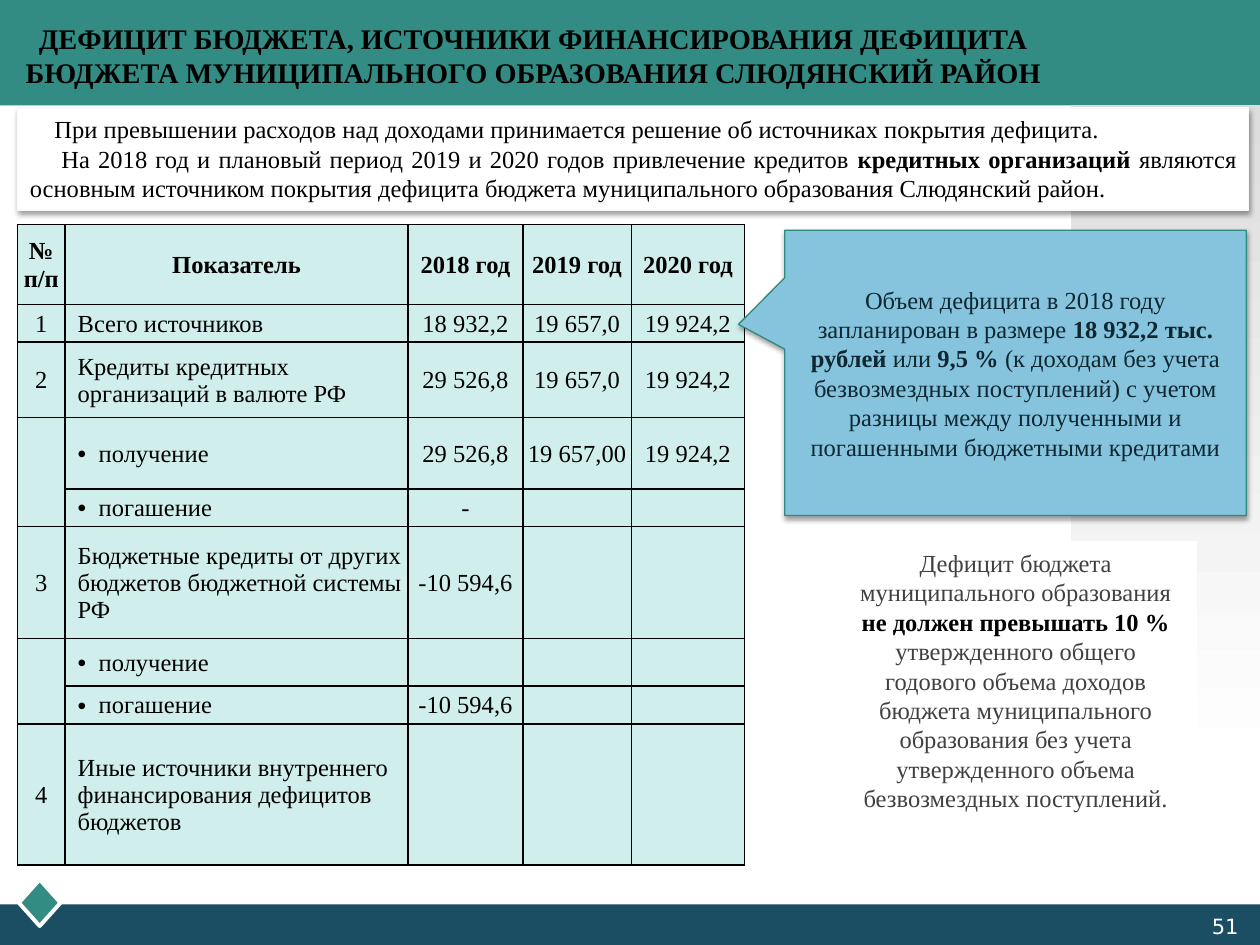
from dataclasses import dataclass
from typing import NamedTuple, Optional

from lxml.etree import SubElement
from pptx import Presentation
from pptx.dml.color import RGBColor
from pptx.enum.shapes import MSO_SHAPE as Shape
from pptx.enum.text import MSO_ANCHOR as Anchor, PP_ALIGN as Align
from pptx.oxml.ns import qn
from pptx.util import Pt


@dataclass(frozen=True)
class Theme:
    font: str = "Times New Roman"
    number_font: str = "DejaVu Sans"
    title_size: float = 16.2
    body_size: float = 14
    number_size: float = 12
    teal: str = "328C83"
    navy: str = "1B4E63"
    mint: str = "D0EEEB"
    sky: str = "86C4DE"
    callout_line: str = "2F8B82"
    callout_text: str = "0E2732"
    muted_text: str = "404040"
    pale_line: str = "F9F9F9"
    panel_grey: str = "DDDDDD"
    black: str = "000000"
    white: str = "FFFFFF"


class Box(NamedTuple):
    left: float
    top: float
    width: float
    height: float

    def lengths(self):
        return [Pt(value) for value in self]


class IndicatorRow(NamedTuple):
    height: float
    number: str
    indicator: str
    amounts: tuple = ("", "", "")
    bulleted: bool = False


THEME = Theme()
TABLE_BOX = Box(10, 128.3, 415.5, 367)
COLUMN_WIDTHS = (27.2, 196, 65.6, 62, 64.7)
MERGED_NUMBER_ROWS = (3, 6)
ROWS = (
    IndicatorRow(45.8, "№ п/п", "Показатель", ("2018 год", "2019 год", "2020 год")),
    IndicatorRow(21.5, "1", "Всего источников", ("18 932,2", "19 657,0", "19 924,2")),
    IndicatorRow(43, "2", "Кредиты кредитных организаций в валюте РФ",
                 ("29 526,8", "19 657,0", "19 924,2")),
    IndicatorRow(40.8, "", "получение", ("29 526,8", "19 657,00", "19 924,2"), True),
    IndicatorRow(21.5, "", "погашение", ("-", "", ""), True),
    IndicatorRow(64, "3", "Бюджетные кредиты от других бюджетов бюджетной системы РФ",
                 ("-10 594,6", "", "")),
    IndicatorRow(27.3, "", "получение", bulleted=True),
    IndicatorRow(21.5, "", "погашение", ("-10 594,6", "", ""), True),
    IndicatorRow(80.7, "4", "Иные источники внутреннего финансирования дефицитов бюджетов"),
)


def rgb(color: str) -> RGBColor:
    return RGBColor.from_string(color)


def write(frame, *paragraphs: str, size: float = THEME.body_size, font: str = THEME.font,
          color: str = THEME.black, strong_color: Optional[str] = None, bold: bool = False,
          align=Align.CENTER, anchor=Anchor.TOP, indents: tuple = (), bulleted: bool = False):
    """Fill a text frame; parts between asterisks are bold."""
    frame.word_wrap = True
    frame.vertical_anchor = anchor
    for index, content in enumerate(paragraphs):
        paragraph = frame.paragraphs[0] if index == 0 else frame.add_paragraph()
        paragraph.alignment = align
        properties = paragraph._p.get_or_add_pPr()
        if indents:
            properties.set("indent", str(Pt(indents[index])))
        if bulleted:
            properties.set("marL", str(Pt(12)))
            properties.set("indent", str(-Pt(12)))
            SubElement(properties, qn("a:buFont"), typeface="Arial")
            SubElement(properties, qn("a:buChar"), char="•")
        if not content:
            SubElement(paragraph._p, qn("a:endParaRPr"), sz=str(int(size * 100)))
            continue
        for part, words in enumerate(content.split("*")):
            if not words:
                continue
            strong = part % 2 == 1
            run = paragraph.add_run()
            run.text = words
            run.font.size = Pt(size)
            run.font.name = font
            run.font.bold = bold or strong
            run.font.color.rgb = rgb(strong_color if strong and strong_color else color)


def add_block(slide, kind, box: Box, fill: str, line: Optional[str] = None,
              line_width: float = 0.75, shadow: bool = False):
    block = slide.shapes.add_shape(kind, *box.lengths())
    block.shadow.inherit = False
    block.fill.solid()
    block.fill.fore_color.rgb = rgb(fill)
    if line:
        block.line.color.rgb = rgb(line)
        block.line.width = Pt(line_width)
    else:
        block.line.fill.background()
    if shadow:
        effects = block.element.spPr.find(qn("a:effectLst"))
        outer = SubElement(effects, qn("a:outerShdw"), blurRad=str(Pt(3.1)),
                           dist=str(Pt(1.6)), dir="5400000", rotWithShape="0")
        tint = SubElement(outer, qn("a:srgbClr"), val=THEME.black)
        SubElement(tint, qn("a:alpha"), val="38000")
    return block


def draw_backdrop(slide):
    add_block(slide, Shape.RECTANGLE, Box(0, 0, 720, 60.3), THEME.teal)
    add_block(slide, Shape.RECTANGLE, Box(0, 516.8, 720, 23.2), THEME.navy)
    add_block(slide, Shape.DIAMOND, Box(10.8, 502.6, 23.8, 26.6), THEME.teal, THEME.white, 2.25)
    side_panel = add_block(slide, Shape.RECTANGLE, Box(612, 60, 108, 378), THEME.white)
    side_panel.fill.gradient()
    side_panel.fill.gradient_angle = 270
    for stop, color in zip(side_panel.fill.gradient_stops, (THEME.panel_grey, THEME.white)):
        stop.color.rgb = rgb(color)


def style_cell(cell, left_inset: float):
    cell.margin_left = Pt(left_inset)
    cell.margin_top = cell.margin_right = Pt(0.7)
    cell.margin_bottom = 0
    cell.vertical_anchor = Anchor.MIDDLE
    properties = cell._tc.get_or_add_tcPr()
    for side in ("lnL", "lnR", "lnT", "lnB"):
        border = SubElement(properties, qn(f"a:{side}"), w=str(Pt(1)))
        SubElement(SubElement(border, qn("a:solidFill")), qn("a:srgbClr"), val=THEME.black)
    cell.fill.solid()
    cell.fill.fore_color.rgb = rgb(THEME.mint)


def draw_sources_table(slide):
    table = slide.shapes.add_table(len(ROWS), len(COLUMN_WIDTHS), *TABLE_BOX.lengths()).table
    table.first_row = table.horz_banding = False
    for column, width in zip(table.columns, COLUMN_WIDTHS):
        column.width = Pt(width)
    for row_index, row in enumerate(ROWS):
        table.rows[row_index].height = Pt(row.height)
        header = row_index == 0
        for column_index, words in enumerate((row.number, row.indicator, *row.amounts)):
            cell = table.cell(row_index, column_index)
            descriptive = column_index == 1 and not header
            style_cell(cell, 7.2 if descriptive else 0.7)
            write(cell.text_frame, words, bold=header, anchor=None,
                  align=Align.LEFT if descriptive else Align.CENTER,
                  bulleted=descriptive and row.bulleted)
    for first in MERGED_NUMBER_ROWS:
        table.cell(first, 0).merge(table.cell(first + 1, 0))


def draw_title(slide):
    title = slide.shapes.title
    title.left, title.top, title.width, title.height = Box(0, 0, 609, 62.6).lengths()
    write(title.text_frame,
          "ДЕФИЦИТ БЮДЖЕТА, ИСТОЧНИКИ ФИНАНСИРОВАНИЯ ДЕФИЦИТА "
          "БЮДЖЕТА МУНИЦИПАЛЬНОГО ОБРАЗОВАНИЯ СЛЮДЯНСКИЙ РАЙОН",
          size=THEME.title_size, bold=True, anchor=Anchor.MIDDLE)
    title.element.getparent().append(title.element)  # in front of the header band


def draw_page_number(slide):
    page_number = slide.shapes.add_textbox(*Box(681.8, 518.4, 36.7, 21.6).lengths())
    write(page_number.text_frame, "51", size=THEME.number_size,
          font=THEME.number_font, color=THEME.white)


def draw_notes(slide):
    limit = add_block(slide, Shape.RECTANGLE, Box(477.4, 309.6, 206, 160), THEME.white, THEME.white)
    write(limit.text_frame, "Дефицит бюджета муниципального образования",
          "*не должен превышать 10 % *утвержденного общего годового объема доходов бюджета "
          "муниципального образования без учета утвержденного объема безвозмездных поступлений.",
          color=THEME.muted_text, strong_color=THEME.black)
    intro = add_block(slide, Shape.RECTANGLE, Box(10, 61.7, 703.6, 58.3), THEME.white,
                      THEME.pale_line, shadow=True)
    write(intro.text_frame,
          "При превышении расходов над доходами принимается решение об источниках покрытия дефицита.",
          "На 2018 год и плановый период 2019 и 2020 годов привлечение кредитов *кредитных "
          "организаций *являются основным источником покрытия дефицита бюджета муниципального "
          "образования Слюдянский район.", align=Align.JUSTIFY, indents=(14, 18))
    callout = add_block(slide, Shape.RECTANGULAR_CALLOUT, Box(448.4, 131.6, 263.8, 163),
                        THEME.sky, THEME.callout_line, shadow=True)
    callout.adjustments[0], callout.adjustments[1] = -0.6, -0.17
    write(callout.text_frame,
          "Объем дефицита в 2018 году запланирован в размере *18 932,2 тыс. рублей *или *9,5 % *"
          "(к доходам без учета безвозмездных поступлений) с учетом разницы между полученными "
          "и погашенными бюджетными кредитами", color=THEME.callout_text, anchor=Anchor.MIDDLE)


def main():
    deck = Presentation()
    deck.slide_width, deck.slide_height = Pt(720), Pt(540)
    slide = deck.slides.add_slide(deck.slide_layouts[5])
    draw_backdrop(slide)
    draw_sources_table(slide)
    draw_title(slide)
    draw_page_number(slide)
    draw_notes(slide)
    deck.save("out.pptx")


if __name__ == "__main__":
    main()
